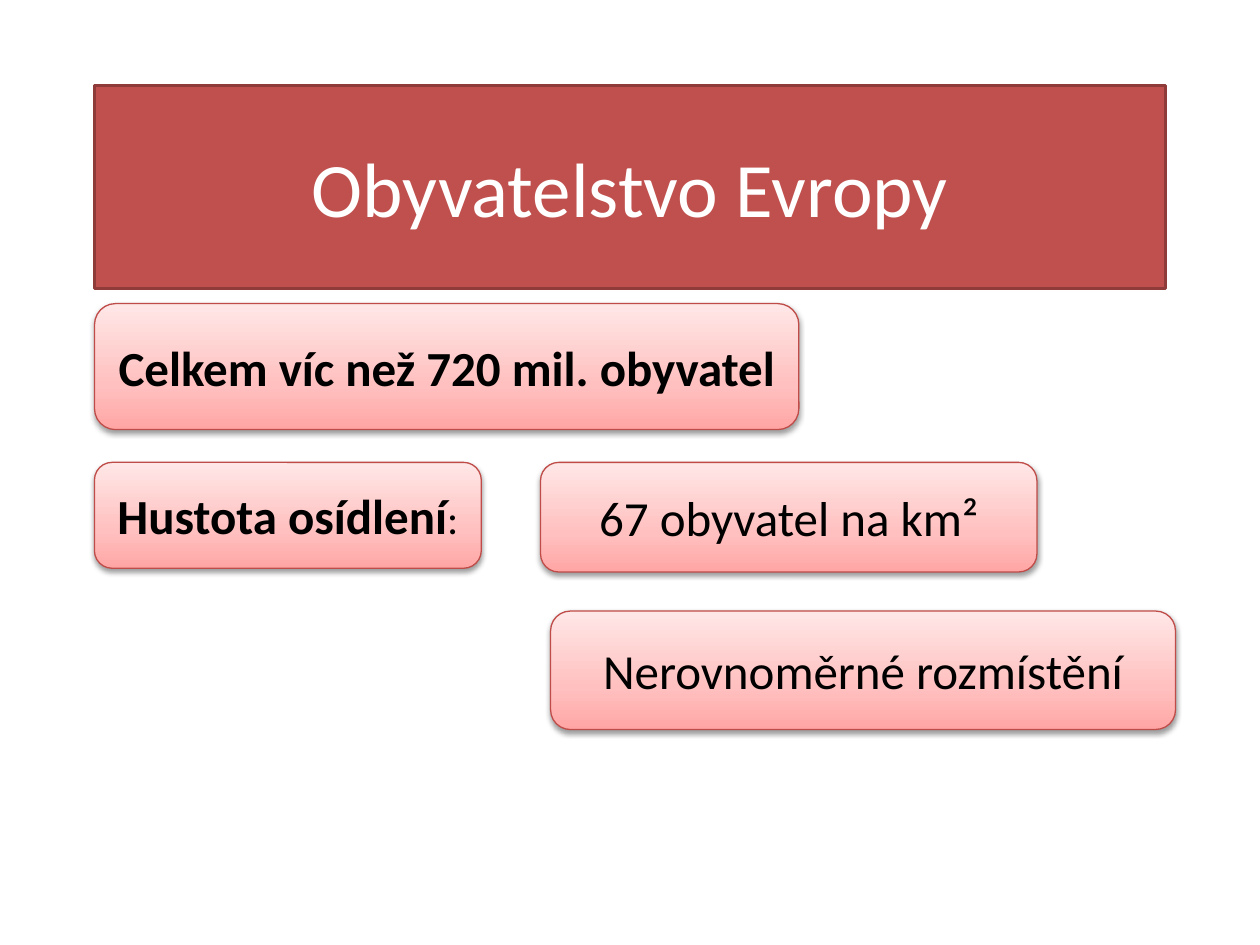
from lxml.etree import fromstring
from pptx import Presentation
from pptx.dml.color import RGBColor
from pptx.enum.shapes import MSO_SHAPE as Shape
from pptx.enum.text import MSO_ANCHOR as Anchor, PP_ALIGN as Align
from pptx.util import Inches, Pt

NS = 'xmlns:a="http://schemas.openxmlformats.org/drawingml/2006/main"'
STOPS = [(0, "FFA6A5"), (35, "FFC0BF"), (100, "FFE7E7")]
LEFT = 0.75


def color(code):
    return RGBColor.from_string(code)


def style(run, size, code, bold=False):
    font = run.font
    font.name, font.size, font.bold = "Calibri", Pt(size), bold
    font.color.rgb = color(code)


deck = Presentation()
deck.slide_width, deck.slide_height = Inches(10), Inches(7.5)
slide = deck.slides.add_slide(deck.slide_layouts[5])

# Title band
title = slide.shapes.title
title.left, title.top = Inches(LEFT), Inches(0.68)
title.width, title.height = Inches(10 - 2 * LEFT), Inches(1.61)
title.fill.solid()
title.fill.fore_color.rgb = color("C0504D")
title.line.color.rgb = color("8E3B39")
title.line.width = Pt(2)
title.text_frame.text = "Obyvatelstvo Evropy"
title.text_frame.vertical_anchor = Anchor.MIDDLE
para = title.text_frame.paragraphs[0]
para.alignment = Align.CENTER
style(para.runs[0], 44, "FFFFFF")

# Gradient and shadow shared by the fact boxes
stops = "".join(f'<a:gs pos="{pos * 1000}"><a:srgbClr val="{code}"/></a:gs>'
                for pos, code in STOPS)
grad = (f'<a:gradFill {NS} rotWithShape="1"><a:gsLst>{stops}</a:gsLst>'
        '<a:lin ang="16200000" scaled="0"/></a:gradFill>')
shade = (f'<a:effectLst {NS}><a:outerShdw blurRad="{Pt(3.1)}" dist="{Pt(1.6)}" '
         'dir="5400000" rotWithShape="0"><a:srgbClr val="000000">'
         '<a:alpha val="38000"/></a:srgbClr></a:outerShdw></a:effectLst>')

# Fact boxes: left, top, width, height, runs of (text, size, bold)
facts = [
    (LEFT, 2.41, 5.59, 1, [("Celkem víc než 720 mil. obyvatel", 28, True)]),
    (LEFT, 3.67, 3.07, 0.84, [("Hustota osídlení", 28, True), (":", 24, False)]),
    (4.29, 3.67, 3.94, 0.87, [("67 obyvatel na km²", 28, False)]),
    (4.37, 4.85, 4.96, 0.94, [("Nerovnoměrné rozmístění", 28, False)]),
]
for *place, runs in facts:
    box = slide.shapes.add_shape(Shape.ROUNDED_RECTANGLE, *map(Inches, place))
    props = box.element.spPr
    props.append(fromstring(grad))
    box.line.color.rgb = color("BF4C48")
    box.line.width = Pt(0.75)
    props.append(fromstring(shade))
    box.text_frame.word_wrap = True
    box.text_frame.vertical_anchor = Anchor.MIDDLE
    para = box.text_frame.paragraphs[0]
    para.alignment = Align.CENTER
    for text, size, bold in runs:
        run = para.add_run()
        run.text = text
        style(run, size, "000000", bold)

deck.save("out.pptx")
